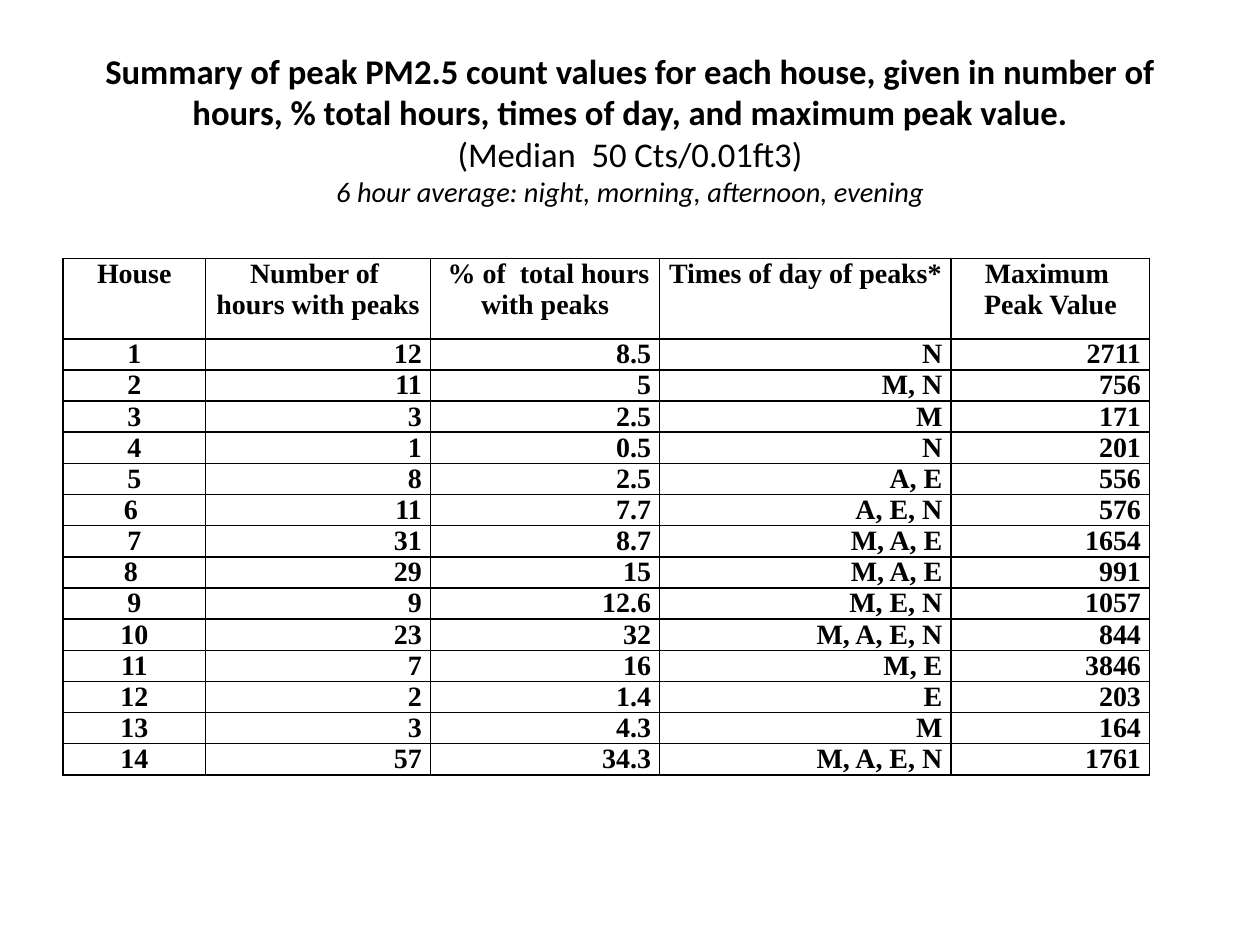
from lxml.etree import SubElement as Sub
from pptx import Presentation
from pptx.dml.color import RGBColor as Rgb
from pptx.enum.text import MSO_ANCHOR as Anchor, MSO_AUTO_SIZE as Fit, PP_ALIGN as Align
from pptx.oxml.ns import qn
from pptx.util import Pt

INK = {"text": "000000", "line": "000000"}
HEAD = ["House", "Number of  hours with peaks", " % of  total hours with peaks",
        "Times of day of peaks*", "Maximum  Peak Value"]
ROWS = [
    ("1", "12", "8.5", "N", "2711"),
    ("2", "11", "5", "M, N", "756"),
    ("3", "3", "2.5", "M", "171"),
    ("4", "1", "0.5", "N", "201"),
    ("5", "8", "2.5", "A, E", "556"),
    ("6 ", "11", "7.7", "A, E, N", "576"),
    ("7", "31", "8.7", "M, A, E", "1654"),
    ("8 ", "29", "15", "M, A, E", "991"),
    ("9", "9", "12.6", "M, E, N", "1057"),
    ("10", "23", "32", "M, A, E, N", "844"),
    ("11", "7", "16", "M, E", "3846"),
    ("12", "2", "1.4", "E", "203"),
    ("13", "3", "4.3", "M", "164"),
    ("14", "57", "34.3", "M, A, E, N", "1761"),
]
WIDTHS = [81.5, 128.5, 131, 166.5, 113.5]
HEAD_H, ROW_H = 46, 17.5


def add_run(para, text, size, face, bold=False, slant=False):
    run = para.add_run()
    run.text = text
    font = run.font
    font.size, font.name, font.bold, font.italic = Pt(size), face, bold, slant
    font.color.rgb = Rgb.from_string(INK["text"])


def add_title(slide):
    title = slide.shapes.title
    title.left, title.top, title.width, title.height = Pt(36), Pt(21.6), Pt(648), Pt(104)
    frame = title.text_frame
    frame.word_wrap, frame.auto_size = True, Fit.NONE
    frame.vertical_anchor = Anchor.MIDDLE
    para = frame.paragraphs[0]
    para.alignment = Align.CENTER
    add_run(para, "Summary of peak PM2.5 count values for each house, given in number of "
            "hours, % total hours, times of day, and maximum peak value.",
            19.8, "Calibri", bold=True)
    para.add_line_break()
    add_run(para, "(Median  50 Cts/0.01ft3)", 19.8, "Calibri")
    para.add_line_break()
    add_run(para, "6 hour average: night, morning, afternoon, evening",
            16.2, "Calibri", slant=True)


def rule_cell(cell):
    """Draw a thin line on all four sides of the cell."""
    props = cell._tc.get_or_add_tcPr()
    for side in "LRTB":
        line = Sub(props, qn(f"a:ln{side}"), w=str(Pt(1)))
        fill = Sub(line, qn("a:solidFill"))
        Sub(fill, qn("a:srgbClr"), val=INK["line"])


def fill_cell(cell, text, align):
    rule_cell(cell)
    cell.fill.background()
    cell.margin_left = cell.margin_right = Pt(5)
    cell.margin_top = cell.margin_bottom = 0
    para = cell.text_frame.paragraphs[0]
    para.alignment = align
    add_run(para, text, 16, "Times New Roman", bold=True)


def add_grid(slide):
    data = [HEAD, *ROWS]
    high = HEAD_H + ROW_H * len(ROWS)
    table = slide.shapes.add_table(len(data), len(HEAD), Pt(36), Pt(147.6),
                                   Pt(sum(WIDTHS)), Pt(high)).table
    table.first_row = table.horz_banding = False
    for col, width in zip(table.columns, WIDTHS):
        col.width = Pt(width)
    for r, row in enumerate(data):
        table.rows[r].height = Pt(ROW_H if r else HEAD_H)
        for c, text in enumerate(row):
            fill_cell(table.cell(r, c), text, Align.RIGHT if r and c else Align.CENTER)


def main():
    deck = Presentation()
    deck.slide_width, deck.slide_height = Pt(720), Pt(540)
    slide = deck.slides.add_slide(deck.slide_layouts[5])
    add_grid(slide)
    add_title(slide)
    deck.save("out.pptx")


if __name__ == "__main__":
    main()
